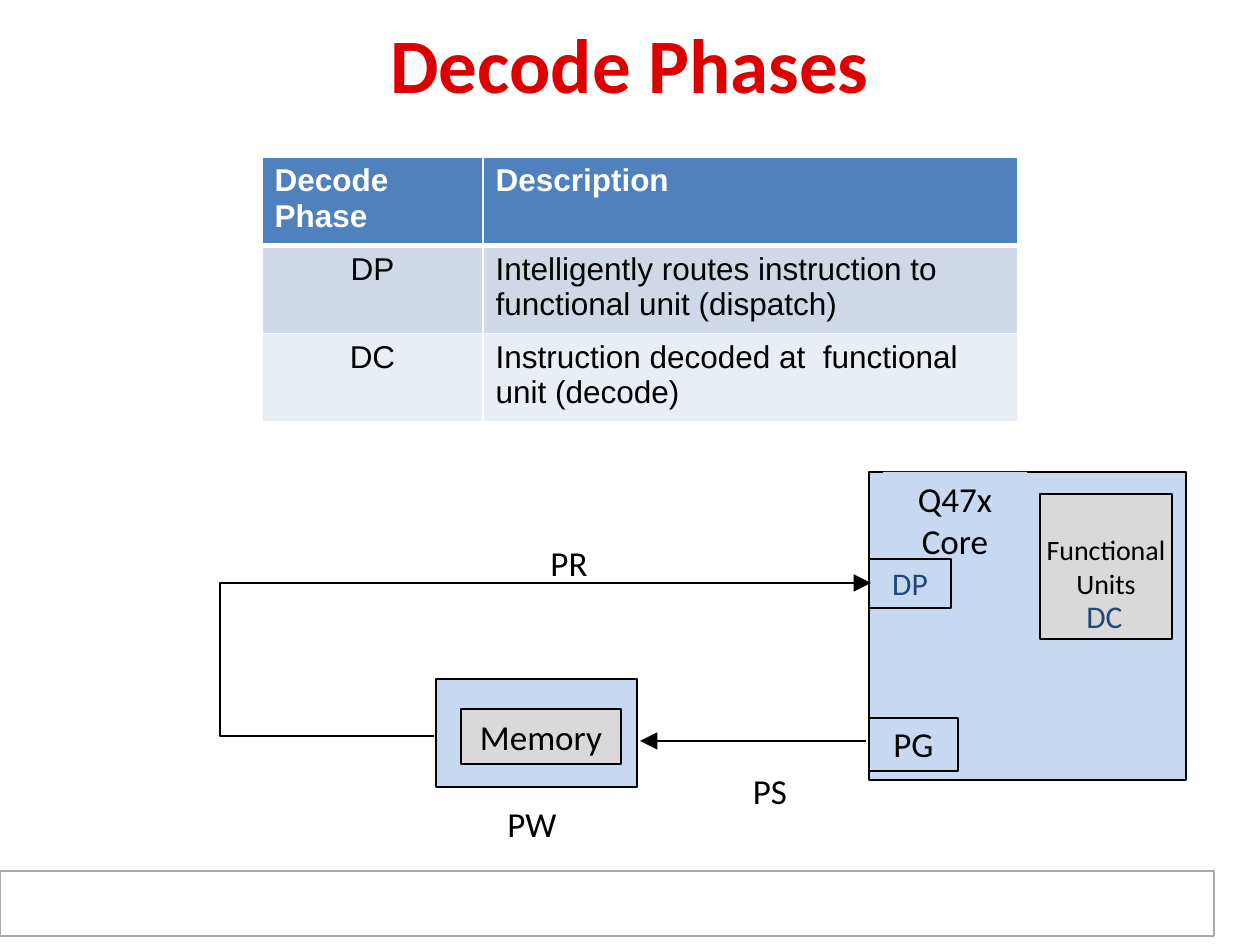
import pptx
import pptx.util
import pptx.dml.color
import pptx.enum.shapes
import pptx.enum.text
import pptx.oxml
import pptx.oxml.ns

PX = 914400 / 126
THEME = {
    "font": "Calibri", "table_font": "Arial",
    "title": 44, "label": 20, "table": 18, "phase": 18, "unit": 16,
    "red": "DE0000", "black": "000000", "white": "FFFFFF", "navy": "1F497D",
    "pale": "C6D9F1", "grey": "D9D9D9", "frame": "AAAAAA",
    "header": "4F81BD", "bands": ["D0D8E8", "E9EDF4"],
}
SMALL, LARGE = (11, 5), (13, 6)
ALIGN = pptx.enum.text.PP_ALIGN
ANCHOR = pptx.enum.text.MSO_ANCHOR
RECTANGLE = pptx.enum.shapes.MSO_SHAPE.RECTANGLE
NS = pptx.oxml.ns.nsdecls("a")


def add_run(paragraph, text, size, color, font=THEME["font"], bold=False):
    run = paragraph.add_run()
    run.text = text
    run.font.name, run.font.size, run.font.bold = font, pptx.util.Pt(size), bold
    run.font.color.rgb = pptx.dml.color.RGBColor.from_string(color)


def add_box(at, paragraphs=(), size=THEME["label"], color=THEME["black"], fill=None,
            line=None, weight=1, inset=SMALL, anchor=ANCHOR.TOP, wrap=True, bold=False):
    place = [round(v * PX) for v in at]
    if fill or line:
        box = slide.shapes.add_shape(RECTANGLE, *place)
        box.shadow.inherit = False
    else:
        box = slide.shapes.add_textbox(*place)
    if fill:
        box.fill.solid()
        box.fill.fore_color.rgb = pptx.dml.color.RGBColor.from_string(fill)
    else:
        box.fill.background()
    if line:
        box.line.color.rgb = pptx.dml.color.RGBColor.from_string(line)
        box.line.width = pptx.util.Pt(weight)
    else:
        box.line.fill.background()
    frame = box.text_frame
    frame.word_wrap, frame.vertical_anchor = wrap, anchor
    frame.margin_left = frame.margin_right = round(inset[0] * PX)
    frame.margin_top = frame.margin_bottom = round(inset[1] * PX)
    for i, lines in enumerate(paragraphs):
        paragraph = frame.add_paragraph() if i else frame.paragraphs[0]
        paragraph.alignment = ALIGN.CENTER
        for j, text in enumerate(lines.split("\n")):
            if j:
                paragraph.add_line_break()
            add_run(paragraph, text, size, color, bold=bold)


prs = pptx.Presentation()
prs.slide_width, prs.slide_height = round(1260 * PX), round(945 * PX)
slide = prs.slides.add_slide(prs.slide_layouts[6])

# Footer frame and title
add_box((0, 871, 1214, 65), fill=THEME["white"], line=THEME["frame"], weight=0.75)
add_box((63, 10, 1134, 105), ["Decode Phases"], THEME["title"], THEME["red"],
        inset=LARGE, anchor=ANCHOR.MIDDLE, bold=True)

# Table of decode phases; rows grow to fit their text
rows = [
    ("Decode Phase", "Description"),
    ("DP", "Intelligently routes instruction to functional unit (dispatch)"),
    ("DC", "Instruction decoded at  functional unit (decode)"),
]
table = slide.shapes.add_table(
    len(rows), 2, *[round(v * PX) for v in (262, 157, 756, 227)]).table
for column, width in zip(table.columns, (221, 535)):
    column.width = round(width * PX)
for table_row, height in zip(table.rows, (20, 52, 52)):
    table_row.height = round(height * PX)
for r, row in enumerate(rows):
    fill = THEME["bands"][r - 1] if r else THEME["header"]
    for c, text in enumerate(row):
        cell = table.cell(r, c)
        cell.fill.solid()
        cell.fill.fore_color.rgb = pptx.dml.color.RGBColor.from_string(fill)
        if r == 0:
            cell._tc.get_or_add_tcPr().insert(0, pptx.oxml.parse_xml(
                f"<a:lnB {NS} w='38100'><a:solidFill>"
                f"<a:srgbClr val='{THEME['white']}'/></a:solidFill></a:lnB>"))
        paragraph = cell.text_frame.paragraphs[0]
        paragraph.alignment = ALIGN.CENTER if r and c == 0 else ALIGN.LEFT
        add_run(paragraph, text, THEME["table"], THEME["black" if r else "white"],
                THEME["table_font"], bold=r == 0)

# Core and memory blocks
add_box((869, 472, 317, 308), fill=THEME["pale"], line=THEME["black"])
add_box((883, 472, 144, 102), ["Q47x\nCore"], fill=THEME["pale"], inset=LARGE)
add_box((436, 679, 201, 108), fill=THEME["pale"], line=THEME["black"])
add_box((461, 709, 160, 55), ["Memory"], fill=THEME["grey"], line=THEME["black"],
        inset=LARGE)

# Fetch phase labels
for text, left, top in (("PW", 491, 798), ("PS", 729, 765), ("PR", 528, 537)):
    add_box((left, top, 82, 53), [text])

# Address arrow from core to memory
send_arrow = slide.shapes.add_connector(
    pptx.enum.shapes.MSO_CONNECTOR.STRAIGHT,
    *[round(v * PX) for v in (866, 741, 640, 741)])
send_arrow._element.spPr.append(pptx.oxml.parse_xml(f"<a:effectLst {NS}/>"))

# Return path from memory to dispatch
builder = slide.shapes.build_freeform(434, 736, scale=PX)
builder.add_line_segments([(220, 736), (220, 583), (871, 583)], close=False)
return_path = builder.convert_to_shape()
return_path.shadow.inherit = False
return_path.fill.background()

for arrow in (send_arrow, return_path):
    arrow.line.color.rgb = pptx.dml.color.RGBColor.from_string(THEME["black"])
    arrow.line.width = pptx.util.Pt(1)
    arrow.line._get_or_add_ln().append(pptx.oxml.parse_xml(
        f"<a:tailEnd {NS} type='triangle' w='lg' len='lg'/>"))

# Units inside the core
add_box((869, 718, 89, 53), ["PG"], line=THEME["black"])
add_box((1040, 494, 132, 145), ["Functional", "Units"], THEME["unit"],
        fill=THEME["grey"], line=THEME["black"], weight=0.75, inset=LARGE,
        anchor=ANCHOR.MIDDLE, wrap=False)
add_box((869, 559, 82, 49), ["DP"], THEME["phase"], THEME["navy"],
        line=THEME["black"], weight=0.75)
add_box((1047, 592, 115, 49), ["DC"], THEME["phase"], THEME["navy"])

prs.save("out.pptx")
